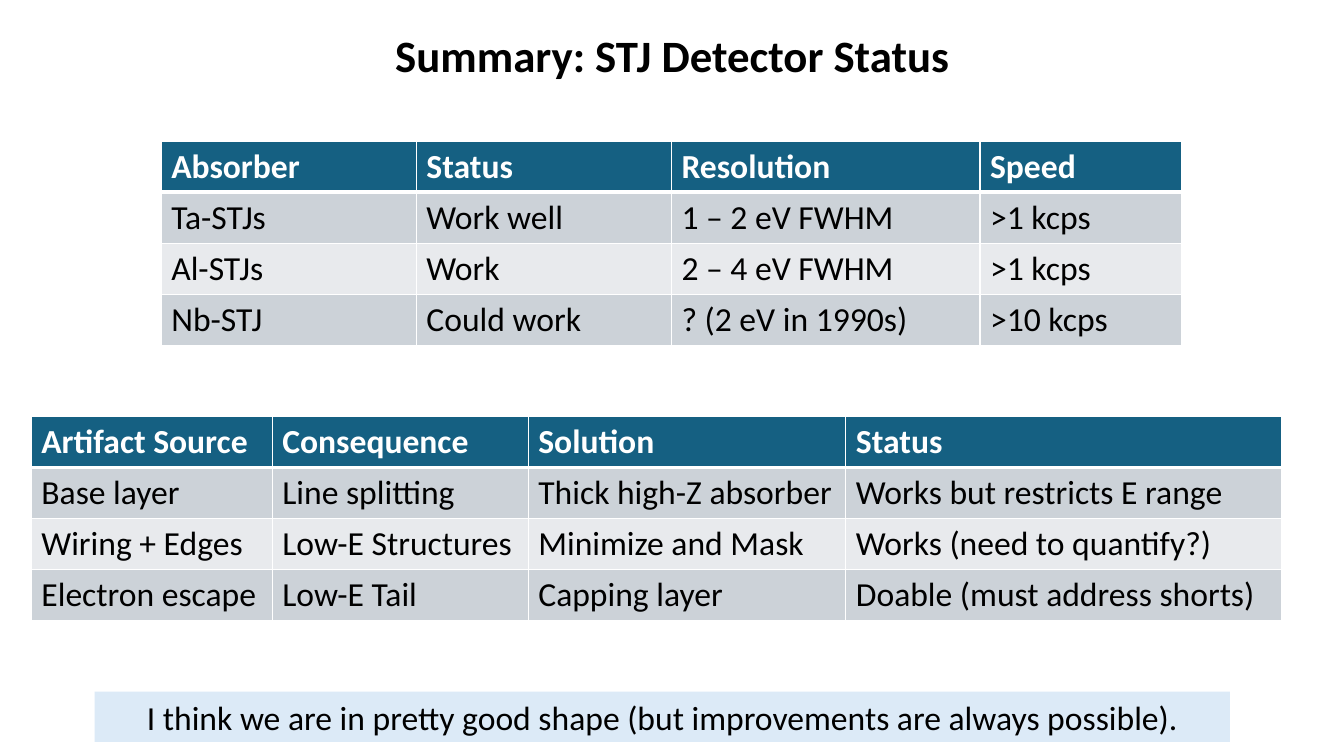
"""Build the STJ detector status summary slide."""
from dataclasses import dataclass

from lxml import etree
from pptx import Presentation
from pptx.dml.color import RGBColor
from pptx.enum.shapes import MSO_SHAPE
from pptx.enum.text import MSO_ANCHOR, PP_ALIGN
from pptx.oxml.ns import qn
from pptx.util import Emu, Inches, Pt

RECTANGLE = MSO_SHAPE.RECTANGLE
CENTER = PP_ALIGN.CENTER
LEFT = PP_ALIGN.LEFT
MIDDLE = MSO_ANCHOR.MIDDLE
TOP = MSO_ANCHOR.TOP

SLIDE_WIDTH = Inches(13.33)
SLIDE_HEIGHT = Inches(7.5)
ROW_SHARE = 6.67
COLORS = {
    "black": "000000",
    "white": "FFFFFF",
    "header": "156082",
    "dark_band": "CCD2D8",
    "light_band": "E8EAED",
    "banner": "DCEAF7",
}


@dataclass(frozen=True)
class Area:
    """Position and size in percent of the slide."""
    left: float
    top: float
    width: float
    height: float


@dataclass(frozen=True)
class StatusTable:
    """A banded table with column widths in percent of the slide."""
    left: float
    top: float
    widths: tuple[float, ...]
    rows: tuple[tuple[str, ...], ...]


TITLE_AREA = Area(7.28, 2.93, 85.52, 8.53)
BANNER_AREA = Area(7.05, 91.47, 84.47, ROW_SHARE)
TABLES = (
    StatusTable(12, 18.67, (18.98, 18.98, 22.96, 15), (
        ("Absorber", "Status", "Resolution", "Speed"),
        ("Ta-STJs", "Work well", "1 – 2 eV FWHM", ">1 kcps"),
        ("Al-STJs", "Work", "2 – 4 eV FWHM", ">1 kcps"),
        ("Nb-STJ", "Could work", "? (2 eV in 1990s)", ">10 kcps"),
    )),
    StatusTable(2.33, 55.07, (17.93, 19.05, 23.63, 32.41), (
        ("Artifact Source", "Consequence", "Solution", "Status"),
        ("Base layer", "Line splitting", "Thick high-Z absorber",
         "Works but restricts E range"),
        ("Wiring + Edges", "Low-E Structures", "Minimize and Mask",
         "Works (need to quantify?)"),
        ("Electron escape", "Low-E Tail", "Capping layer",
         "Doable (must address shorts)"),
    )),
)


def across(share: float) -> Emu:
    """Convert a percentage of the slide width to a length."""
    return Emu(round(SLIDE_WIDTH * share / 100))


def down(share: float) -> Emu:
    """Convert a percentage of the slide height to a length."""
    return Emu(round(SLIDE_HEIGHT * share / 100))


def place(area: Area) -> tuple[Emu, Emu, Emu, Emu]:
    """Convert an area to slide lengths."""
    return across(area.left), down(area.top), across(area.width), down(area.height)


def write(frame, text: str, color: str = "black", size: int = 24,
          bold: bool = False, align=CENTER, anchor=MIDDLE) -> None:
    """Write one formatted paragraph into a text frame."""
    frame.word_wrap = True
    frame.vertical_anchor = anchor
    para = frame.paragraphs[0]
    para.alignment = align
    span = para.add_run()
    span.text = text
    formats = {"name": "Calibri", "size": Pt(size), "bold": bold}
    for attribute, value in formats.items():
        setattr(span.font, attribute, value)
    span.font.color.rgb = RGBColor.from_string(COLORS[color])


def add_borders(cell, row: int) -> None:
    """Draw white cell borders with a heavy rule below the header."""
    properties = cell._tc.get_or_add_tcPr()
    heavy_side = {0: "B", 1: "T"}.get(row)
    for side in "LRTB":
        width = Pt(3 if side == heavy_side else 1)
        line = etree.SubElement(properties, qn(f"a:ln{side}"), w=str(width))
        fill = etree.SubElement(line, qn("a:solidFill"))
        etree.SubElement(fill, qn("a:srgbClr"), val=COLORS["white"])


def add_status_table(page, content: StatusTable) -> None:
    """Draw one banded status table."""
    count = len(content.rows)
    area = Area(content.left, content.top, sum(content.widths), count * ROW_SHARE)
    table = page.shapes.add_table(count, len(content.widths), *place(area)).table
    for column, share in zip(table.columns, content.widths):
        column.width = across(share)
    for row, texts in enumerate(content.rows):
        table.rows[row].height = down(ROW_SHARE)
        header = row == 0
        band = "header" if header else "dark_band" if row % 2 else "light_band"
        for column, text in enumerate(texts):
            cell = table.cell(row, column)
            add_borders(cell, row)
            cell.fill.solid()
            cell.fill.fore_color.rgb = RGBColor.from_string(COLORS[band])
            write(cell.text_frame, text, "white" if header else "black",
                  bold=header, align=LEFT, anchor=TOP)
            cell.vertical_anchor = TOP


def add_title(page, text: str) -> None:
    """Fill and move the title placeholder."""
    title = page.shapes.title
    title.left, title.top, title.width, title.height = place(TITLE_AREA)
    write(title.text_frame, text, size=32, bold=True)


def add_banner(page, text: str) -> None:
    """Draw the closing statement on a pale band."""
    box = page.shapes.add_shape(RECTANGLE, *place(BANNER_AREA))
    box.shadow.inherit = False
    box.fill.solid()
    box.fill.fore_color.rgb = RGBColor.from_string(COLORS["banner"])
    box.line.fill.background()
    write(box.text_frame, text)


def main() -> None:
    """Assemble and save the deck."""
    deck = Presentation()
    deck.slide_width, deck.slide_height = SLIDE_WIDTH, SLIDE_HEIGHT
    page = deck.slides.add_slide(deck.slide_layouts.get_by_name("Title Only"))
    add_title(page, "Summary: STJ Detector Status")
    for content in TABLES:
        add_status_table(page, content)
    add_banner(page, "I think we are in pretty good shape "
                     "(but improvements are always possible).")
    deck.save("out.pptx")


if __name__ == "__main__":
    main()
